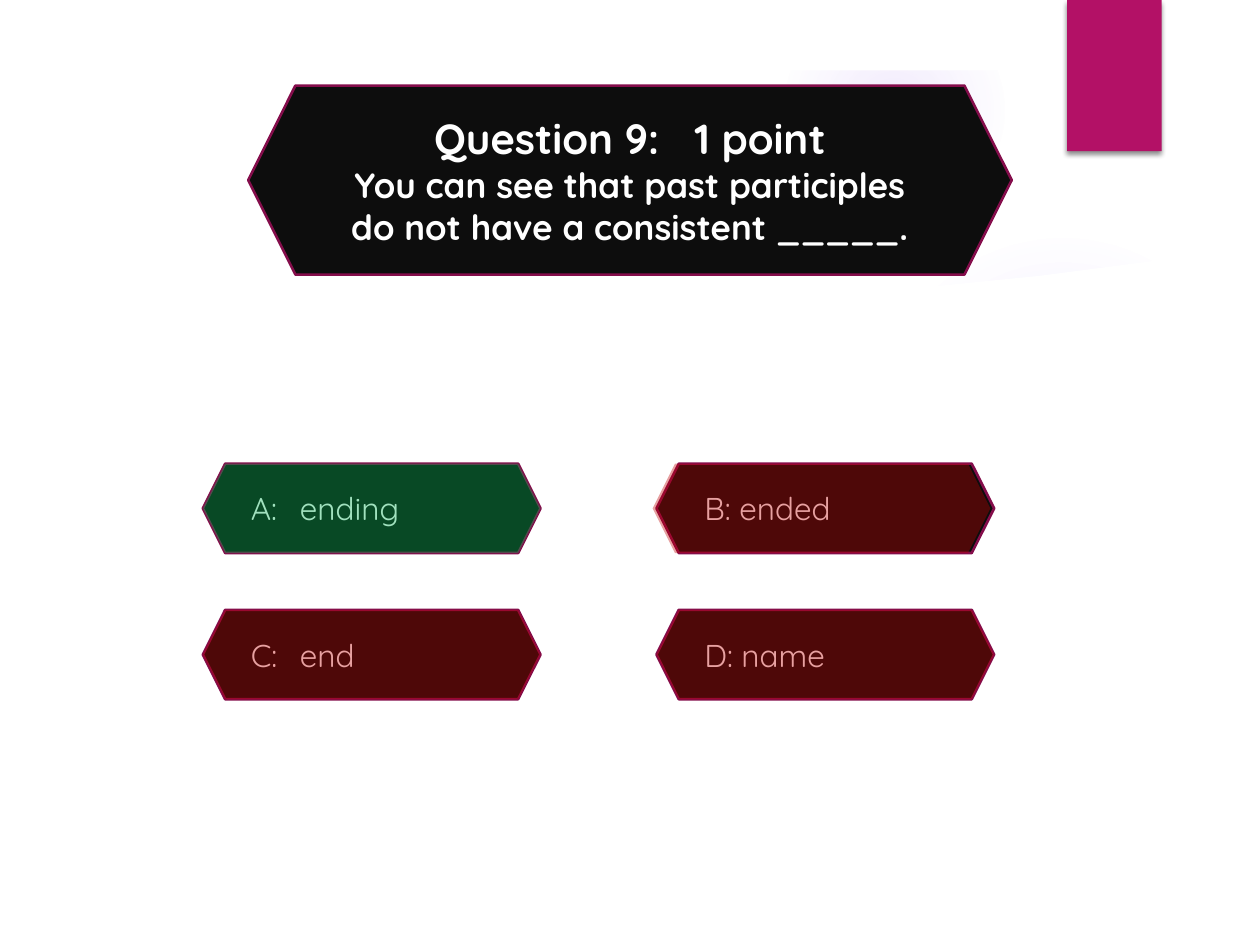
import pptx
import pptx.util
import pptx.dml.color
import pptx.enum.shapes
import pptx.enum.text
import pptx.oxml
import pptx.oxml.ns

Inches, Pt = pptx.util.Inches, pptx.util.Pt
SHAPE = pptx.enum.shapes.MSO_SHAPE
ALIGN = pptx.enum.text.PP_ALIGN
qn = pptx.oxml.ns.qn
NS = pptx.oxml.ns.nsdecls("a")

FONT = "Quicksand"
COLORS = {"white": "FFFFFF", "panel": "0D0D0D", "border": "840D4B", "ribbon": "B31166",
          "glow": "9B6BF2", "right": "00B050", "wrong": "C00000"}

QUESTION = [("Question 9:   1 point", 24),
            ("You can see that past participles do not have a consistent _____.", 20)]
QUESTION_BOX = (1.97, 0.68, 6.06, 1.5)
# label, column, row, verdict, horizontal offset of the verdict tint
ANSWERS = [("A:\tending", 0, 0, "right", 0), ("B: ended", 1, 0, "wrong", -0.03),
           ("C:\tend", 0, 1, "wrong", 0), ("D: name", 1, 1, "wrong", 0)]
ANSWER_LEFT, ANSWER_TOP, COLUMN_STEP, ROW_STEP = 1.61, 3.68, 3.6, 1.16
ANSWER_W, ANSWER_H = 2.68, 0.71
TINT_OPACITY = 37

# left, top, diameter, gradient stops as (position, opacity) in percent
GLOWS = [(6.89, 1.83, 3.08, [(0, 7), (36, 6), (69, 0)]),
         (6.22, 0, 1.75, [(0, 14), (36, 7), (73, 0)])]
PAPER_EDGE = [(0.53, 2.03), (1.73, 2.17), (3.07, 2.28), (4.39, 2.34), (5.48, 2.34),
              (6.64, 2.31), (7.44, 2.27), (8.25, 2.19), (9.47, 2.03), (9.47, 6.99), (0.53, 6.99)]


def rgb(name):
    return pptx.dml.color.RGBColor.from_string(COLORS[name])


def add_shape(s, kind, box, fill, line=None, opacity=None):
    sp = s.shapes.add_shape(kind, *map(Inches, box))
    style(sp, fill, line)
    if opacity is not None:
        clr = sp._element.spPr.find(qn("a:solidFill"))[0]
        clr.append(pptx.oxml.parse_xml(f'<a:alpha {NS} val="{opacity * 1000}"/>'))
    return sp


def style(sp, fill, line=None):
    sp.shadow.inherit = False
    sp.fill.solid()
    sp.fill.fore_color.rgb = rgb(fill)
    if line:
        sp.line.color.rgb = rgb(line)
        sp.line.width = Pt(1.5)
    else:
        sp.line.fill.background()


def add_glow(s, left, top, size, stops):
    """Circle that fades out from its centre."""
    sp = add_shape(s, SHAPE.OVAL, (left, top, size, size), "glow")
    spPr = sp._element.spPr
    gs = "".join(f'<a:gs pos="{pos * 1000}"><a:srgbClr val="{COLORS["glow"]}">'
                 f'<a:alpha val="{alpha * 1000}"/></a:srgbClr></a:gs>' for pos, alpha in stops)
    grad = pptx.oxml.parse_xml(
        f'<a:gradFill {NS}><a:gsLst>{gs}</a:gsLst><a:path path="circle">'
        '<a:fillToRect l="50000" t="50000" r="50000" b="50000"/></a:path></a:gradFill>')
    spPr.replace(spPr.find(qn("a:solidFill")), grad)


def add_backdrop(s):
    for glow in GLOWS:
        add_glow(s, *glow)
    fb = s.shapes.build_freeform(*map(Inches, PAPER_EDGE[0]))
    fb.add_line_segments([(Inches(x), Inches(y)) for x, y in PAPER_EDGE[1:]], close=True)
    style(fb.convert_to_shape(), "white")
    for box in [(0, 0, 10, 0.56), (9.45, 0.56, 0.55, 6.94)]:
        add_shape(s, SHAPE.RECTANGLE, box, "white")
    ribbon = add_shape(s, SHAPE.RECTANGLE, (8.47, 0, 0.75, 1.2), "ribbon")
    ribbon._element.spPr.find(qn("a:effectLst")).append(pptx.oxml.parse_xml(
        f'<a:outerShdw {NS} blurRad="{Pt(3)}" dist="{Pt(2)}" dir="5400000" rotWithShape="0">'
        '<a:srgbClr val="000000"><a:alpha val="45000"/></a:srgbClr></a:outerShdw>'))


def add_panel(s, box, lines, align):
    sp = add_shape(s, SHAPE.HEXAGON, box, "panel", "border")
    tf = sp.text_frame
    tf.word_wrap = True
    tf.vertical_anchor = pptx.enum.text.MSO_ANCHOR.MIDDLE
    for i, (text, size, bold) in enumerate(lines):
        p = tf.paragraphs[0] if i == 0 else tf.add_paragraph()
        p.alignment = align
        if "\t" in text:
            p._p.get_or_add_pPr().append(pptx.oxml.parse_xml(
                f'<a:tabLst {NS}><a:tab pos="{Inches(0.39)}" algn="l"/></a:tabLst>'))
        r = p.add_run()
        r.text = text
        r.font.name, r.font.size, r.font.bold = FONT, Pt(size), bold
        r.font.color.rgb = rgb("white")


def main():
    prs = pptx.Presentation()
    prs.slide_width, prs.slide_height = Inches(10), Inches(7.5)
    s = prs.slides.add_slide(prs.slide_layouts[6])
    add_backdrop(s)
    add_panel(s, QUESTION_BOX, [(text, size, True) for text, size in QUESTION], ALIGN.CENTER)
    for label, col, row, verdict, shift in ANSWERS:
        left, top = ANSWER_LEFT + col * COLUMN_STEP, ANSWER_TOP + row * ROW_STEP
        add_panel(s, (left, top, ANSWER_W, ANSWER_H), [(label, 18, False)], ALIGN.LEFT)
        add_shape(s, SHAPE.HEXAGON, (left + shift, top, ANSWER_W, ANSWER_H), verdict,
                  opacity=TINT_OPACITY)
    prs.save("out.pptx")


if __name__ == "__main__":
    main()
